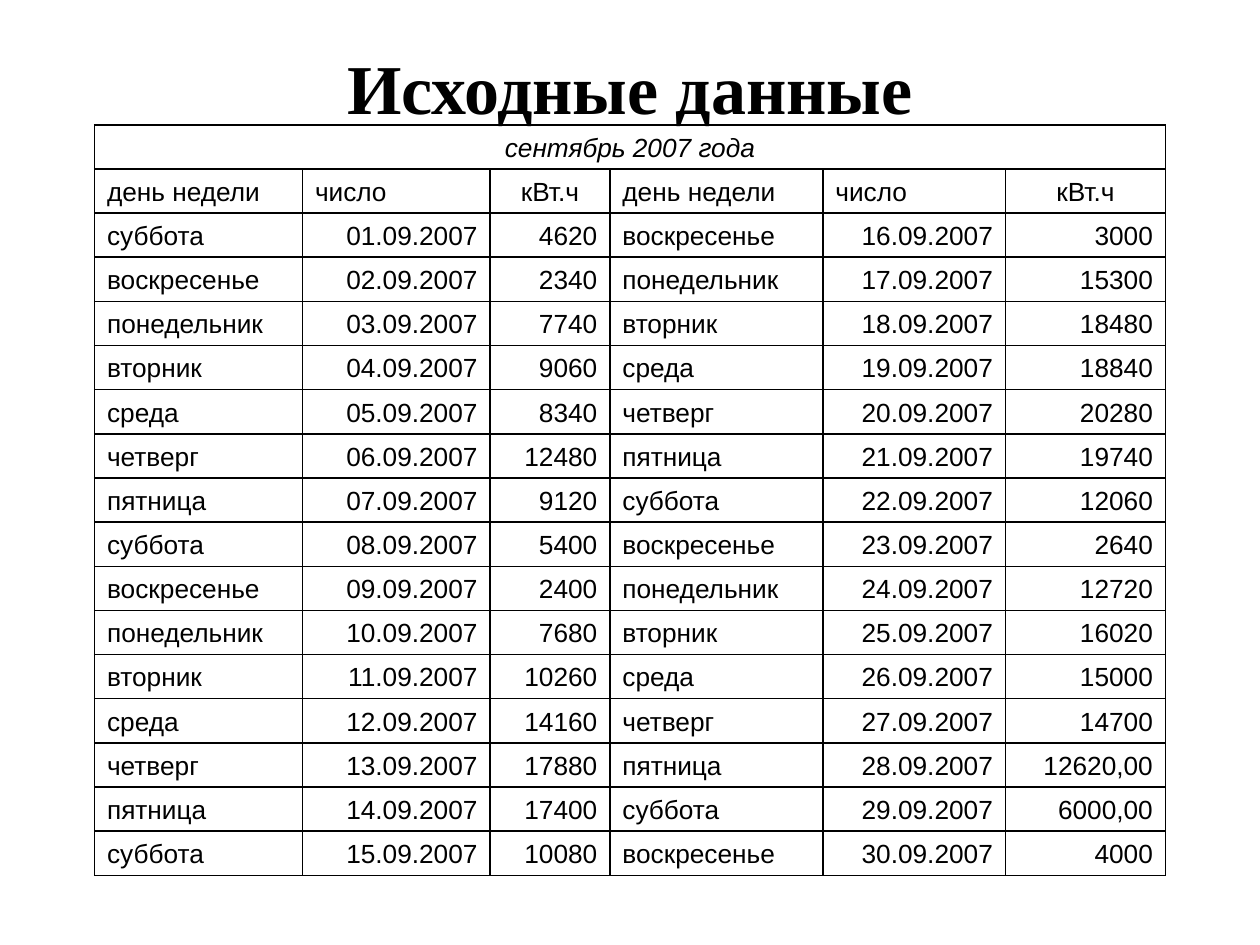
from pptx import Presentation, util as u
from pptx.dml.color import RGBColor
from pptx.enum import text as t
from pptx.oxml import parse_xml
from pptx.oxml.ns import nsdecls

TITLE = "Исходные данные"
MONTH = "сентябрь 2007 года"
HEADS = ["день недели", "число", "кВт.ч"] * 2
DAYS = ["суббота", "воскресенье", "понедельник", "вторник",
        "среда", "четверг", "пятница"]
USAGE = [
    "4620", "2340", "7740", "9060", "8340", "12480", "9120", "5400",
    "2400", "7680", "10260", "14160", "17880", "17400", "10080",
    "3000", "15300", "18480", "18840", "20280", "19740", "12060", "2640",
    "12720", "16020", "15000", "14700", "12620,00", "6000,00", "4000",
]
COLS = [118.8, 107.3, 68.4, 121.7, 104.4, 91.4]
ROW = 25.2
LEFT, TOP, WIDE = 54, 71.3, 612
INDENT = 27
HUES = {"ink": "000000", "page": "FFFFFF"}
SIDE = {"l": t.PP_ALIGN.LEFT, "c": t.PP_ALIGN.CENTER, "r": t.PP_ALIGN.RIGHT}


def write(frame, words, size=15, font="Arial", side="l", bold=False,
          slant=False, hang=0):
    para = frame.paragraphs[0]
    para.alignment = SIDE[side]
    if hang:
        props = para._p.get_or_add_pPr()
        props.set("marL", str(u.Pt(hang)))
        props.set("indent", str(-u.Pt(hang)))
    run = para.add_run()
    run.text = words
    face = run.font
    face.size, face.name = u.Pt(size), font
    face.bold, face.italic = bold, slant
    face.color.rgb = RGBColor.from_string(HUES["ink"])


def border(cell):
    props = cell._tc.get_or_add_tcPr()
    for spot, edge in enumerate(("lnL", "lnR", "lnT", "lnB")):
        props.insert(spot, parse_xml(
            f'<a:{edge} {nsdecls("a")} w="{u.Pt(1)}"><a:solidFill>'
            f'<a:srgbClr val="{HUES["ink"]}"/></a:solidFill></a:{edge}>'))


def record(day):
    return [DAYS[(day - 1) % 7], f"{day:02}.09.2007", USAGE[day - 1]]


def main():
    deck = Presentation()
    deck.slide_width, deck.slide_height = u.Pt(720), u.Pt(540)
    slide = deck.slides.add_slide(deck.slide_layouts[6])
    slide.background.fill.solid()
    slide.background.fill.fore_color.rgb = RGBColor.from_string(HUES["page"])

    box = slide.shapes.add_textbox(u.Pt(LEFT), u.Pt(20.2), u.Pt(WIDE), u.Pt(51.1))
    frame = box.text_frame
    frame.word_wrap = True
    frame.vertical_anchor = t.MSO_ANCHOR.MIDDLE
    frame.margin_top, frame.margin_bottom = u.Pt(7), u.Pt(0)
    write(frame, TITLE, size=40, font="Times New Roman", side="c", bold=True)

    half = len(USAGE) // 2
    body = [record(day) + record(day + half) for day in range(1, half + 1)]
    rows = [[MONTH] + [""] * 5, HEADS] + body
    grid = slide.shapes.add_table(
        len(rows), len(COLS), u.Pt(LEFT), u.Pt(TOP),
        u.Pt(WIDE), u.Pt(ROW * len(rows))).table
    grid.first_row = grid.horz_banding = False
    for col, width in zip(grid.columns, COLS):
        col.width = u.Pt(width)
    grid.cell(0, 0).merge(grid.cell(0, len(COLS) - 1))

    for r, line in enumerate(rows):
        grid.rows[r].height = u.Pt(ROW)
        sides = ("ccc", "llc")[r] if r < 2 else "lrr"
        for c, words in enumerate(line):
            cell = grid.cell(r, c)
            cell.fill.background()
            cell.vertical_anchor = t.MSO_ANCHOR.BOTTOM
            border(cell)
            if words:
                write(cell.text_frame, words, side=sides[c % 3],
                      slant=r == 0, hang=INDENT)

    deck.save("out.pptx")


if __name__ == "__main__":
    main()
